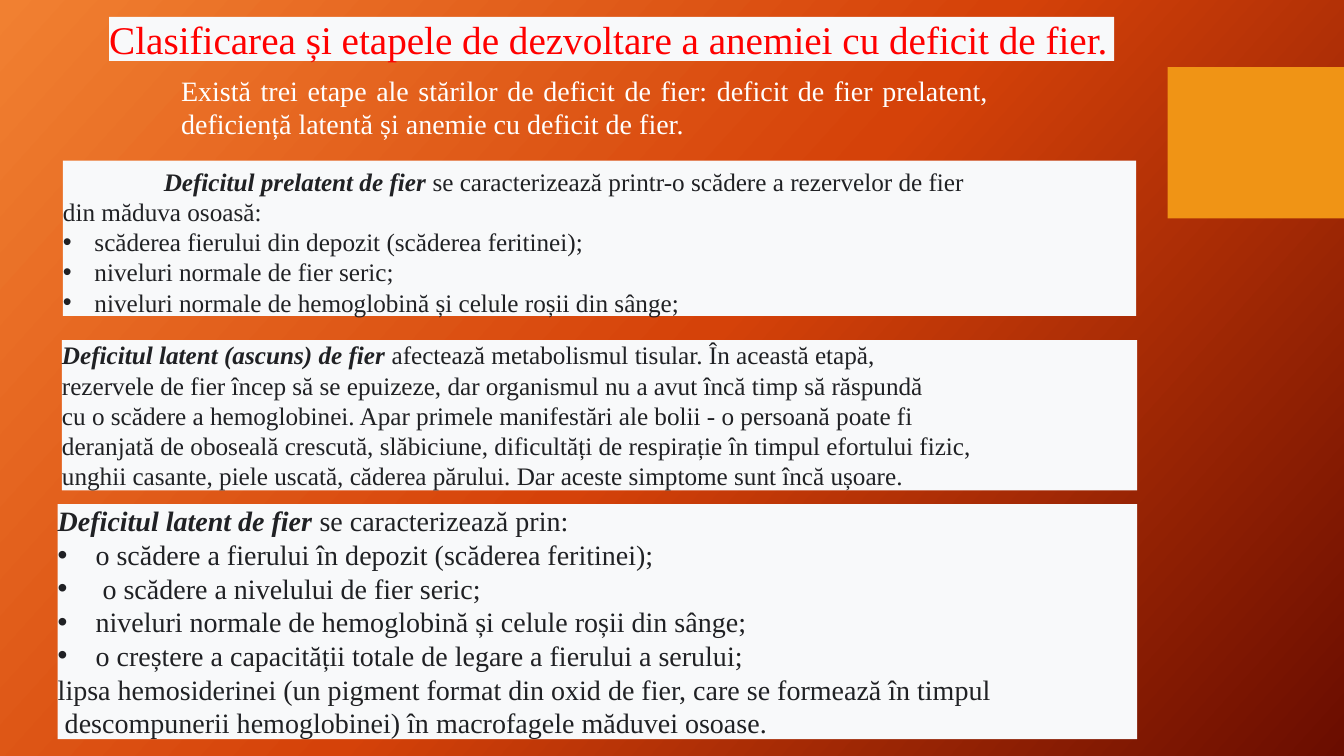
from pptx import Presentation
from pptx.dml.color import RGBColor
from pptx.enum.shapes import MSO_SHAPE
from pptx.enum.text import MSO_ANCHOR, PP_ALIGN
from pptx.oxml import parse_xml
from pptx.oxml.ns import nsdecls
from pptx.util import Pt

# Content: a line is (style, bold lead, plain text)
TITLE = [("", "", "Clasificarea și etapele de dezvoltare a anemiei cu deficit de fier.")]
INTRO = [("", "", "Există trei etape ale stărilor de deficit de fier: deficit de fier prelatent, "
          "deficiență latentă și anemie cu deficit de fier.")]
EARLY = [
    ("first", "Deficitul prelatent de fier ", "se caracterizează printr-o scădere a rezervelor de fier"),
    ("", "", "din măduva osoasă:"),
    ("bullet", "", "scăderea fierului din depozit (scăderea feritinei);"),
    ("bullet", "", "niveluri normale de fier seric;"),
    ("bullet", "", "niveluri normale de hemoglobină și celule roșii din sânge;"),
]
HIDDEN = [
    ("", "Deficitul latent (ascuns) de fier ", "afectează metabolismul tisular. În această etapă,"),
    ("", "", "rezervele de fier încep să se epuizeze, dar organismul nu a avut încă timp să răspundă"),
    ("", "", "cu o scădere a hemoglobinei. Apar primele manifestări ale bolii - o persoană poate fi"),
    ("", "", "deranjată de oboseală crescută, slăbiciune, dificultăți de respirație în timpul efortului fizic,"),
    ("", "", "unghii casante, piele uscată, căderea părului. Dar aceste simptome sunt încă ușoare."),
]
LATENT = [
    ("", "Deficitul latent de fier ", "se caracterizează prin:"),
    ("bullet", "", "o scădere a fierului în depozit (scăderea feritinei);"),
    ("bullet", "", " o scădere a nivelului de fier seric;"),
    ("bullet", "", "niveluri normale de hemoglobină și celule roșii din sânge;"),
    ("bullet", "", "o creștere a capacității totale de legare a fierului a serului;"),
    ("", "", "lipsa hemosiderinei (un pigment format din oxid de fier, care se formează în timpul"),
    ("", "", " descompunerii hemoglobinei) în macrofagele măduvei osoase."),
]

COLORS = {"light": "F18031", "mid": "D54209", "dark": "6A0D00", "tab": "F09415",
          "panel": "F8F9FA", "title": "FF0000", "intro": "FFFFFF", "body": "202124"}
FONT = "Times New Roman"
PX = 9525
FIRST = 96  # indent of an opening line

# Panels: lines, box in px, size, colour, bullet indent, anchor
MID, LOW = MSO_ANCHOR.MIDDLE, MSO_ANCHOR.BOTTOM
PANELS = [
    (TITLE, (104, 16, 957, 42), 28, "title", 0, MID),
    (EARLY, (60, 153, 1022, 148), 18, "body", 30, LOW),
    (HIDDEN, (59, 324, 1024, 143), 18, "body", 0, MID),
    (LATENT, (55, 480, 1028, 224), 20, "body", 36, MID),
]

deck = Presentation()
deck.slide_width, deck.slide_height = 1280 * PX, 720 * PX
slide = deck.slides.add_slide(deck.slide_layouts[6])


def rgb(name):
    return RGBColor.from_string(COLORS[name])


def emu(box):
    return [n * PX for n in box]


def add_rect(box, color):
    shape = slide.shapes.add_shape(MSO_SHAPE.RECTANGLE, *emu(box))
    shape.shadow.inherit = False
    shape.fill.solid()
    shape.fill.fore_color.rgb = rgb(color)
    shape.line.fill.background()
    return shape


def add_lines(frame, lines, size, color, hang=0, align=PP_ALIGN.LEFT):
    frame.word_wrap = True
    for i, (style, lead, text) in enumerate(lines):
        para = frame.add_paragraph() if i else frame.paragraphs[0]
        para.alignment = align
        props = para._p.get_or_add_pPr()
        if style == "first":
            props.set("indent", str(FIRST * PX))
        if style == "bullet":
            props.set("marL", str(hang * PX))
            props.set("indent", str(-hang * PX))
            props.append(parse_xml(f'<a:buFont {nsdecls("a")} typeface="Arial"/>'))
            props.append(parse_xml(f'<a:buChar {nsdecls("a")} char="•"/>'))
        for part, strong in ((lead, True), (text, False)):
            if part:
                run = para.add_run()
                run.text = part
                font = run.font
                font.name, font.size = FONT, Pt(size)
                font.bold = font.italic = strong
                font.color.rgb = rgb(color)


# Background gradient
stops = "".join(f'<a:gs pos="{pos * 1000}"><a:srgbClr val="{COLORS[name]}"/></a:gs>'
                for pos, name in ((0, "light"), (50, "mid"), (100, "dark")))
slide._element.cSld.insert(0, parse_xml(
    f'<p:bg {nsdecls("p", "a")}><p:bgPr><a:gradFill rotWithShape="1"><a:gsLst>{stops}</a:gsLst>'
    f'<a:lin ang="{42 * 60000}" scaled="0"/></a:gradFill><a:effectLst/></p:bgPr></p:bg>'))

# Side tab
add_rect((1112, 64, 168, 144), "tab")

# Intro
intro = slide.shapes.add_textbox(*emu((163, 65, 788, 75)))
add_lines(intro.text_frame, INTRO, 20, "intro", align=PP_ALIGN.JUSTIFY)

# Title and stage panels
for lines, box, size, color, hang, anchor in PANELS:
    frame = add_rect(box, "panel").text_frame
    frame.margin_left = frame.margin_right = 0
    frame.margin_top = frame.margin_bottom = -PX
    frame.vertical_anchor = anchor
    add_lines(frame, lines, size, color, hang)

deck.save("out.pptx")
